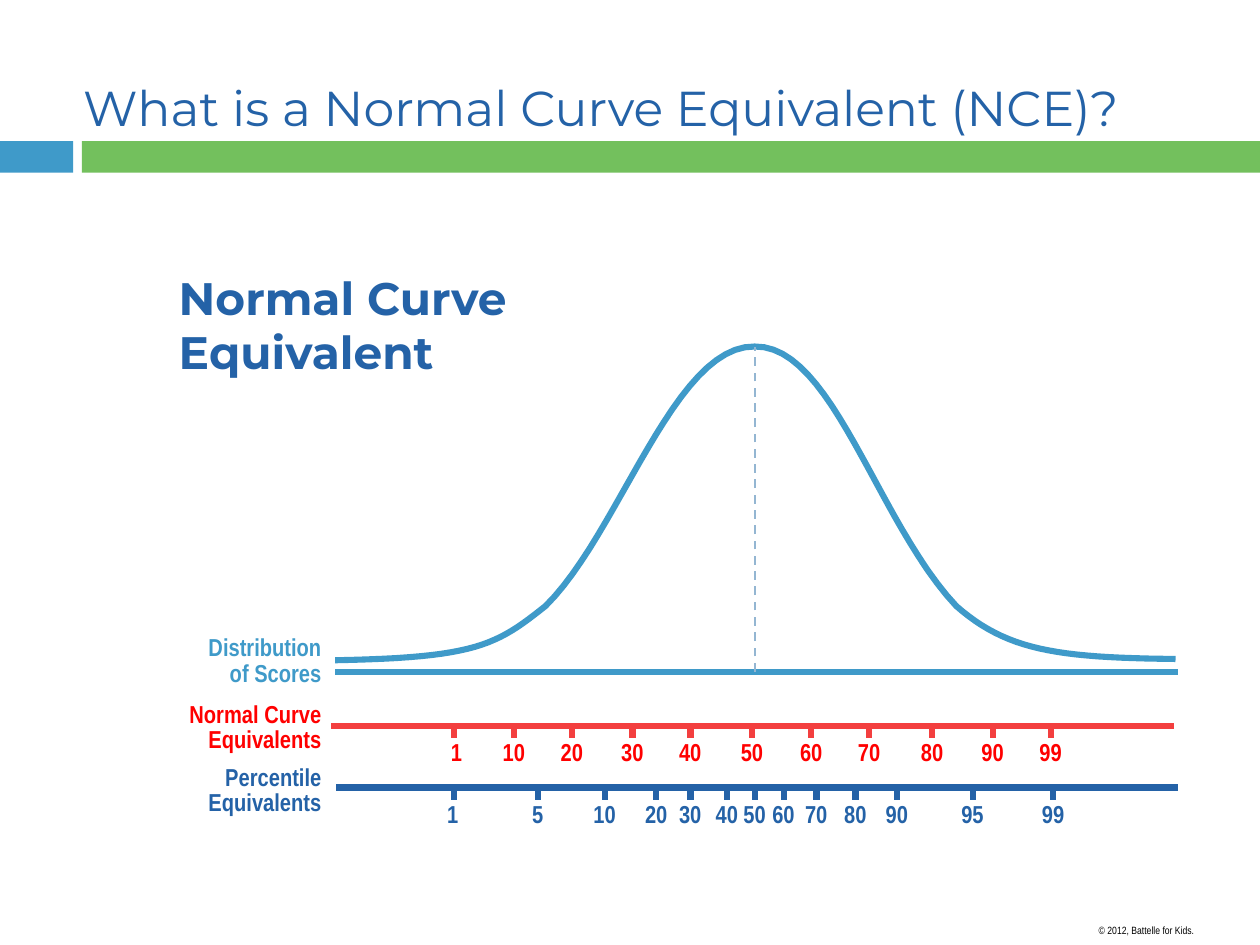
from lxml import etree
from pptx import Presentation
from pptx.dml.color import RGBColor
from pptx.enum import dml, shapes, text
from pptx.oxml import ns
from pptx.util import Inches, Pt

HUES = {"sky": "3F9AC9", "green": "73C05D", "navy": "2462A7", "red": "FF0000",
        "coral": "F33F3F", "dash": "94B6D2", "white": "FFFFFF", "black": "000000"}
NARROW, WIDE = "Arial Narrow", "Montserrat"
RIGHT = text.PP_ALIGN.RIGHT
MID = 5.99

CURVE = [(2.66, 5.24), (3.78, 5.22), (3.94, 5.12), (4.33, 4.81),
         (4.92, 4.23), (5.35, 2.74), (MID, 2.75),
         (6.61, 2.74), (6.96, 4.14), (7.59, 4.81),
         (7.99, 5.16), (8.38, 5.22), (9.33, 5.23)]
NCE = {1: 3.6, 10: 4.08, 20: 4.54, 30: 5.02, 40: 5.48, 50: 5.97,
       60: 6.44, 70: 6.9, 80: 7.4, 90: 7.88, 99: 8.34}
RANKS = {1: 3.6, 5: 4.27, 10: 4.8, 20: 5.21, 30: 5.48, 40: 5.77, 50: MID,
         60: 6.22, 70: 6.48, 80: 6.79, 90: 7.12, 95: 7.72, 99: 8.36}


def rgb(hue):
    return RGBColor.from_string(HUES[hue])


def style(par, size, face, hue, bold=False):
    font = par.font
    font.size, font.name, font.bold = Pt(size), face, bold
    font.color.rgb = rgb(hue)


def bar(slide, left, width, hue):
    box = slide.shapes.add_shape(shapes.MSO_SHAPE.RECTANGLE, Inches(left),
                                 Inches(1.12), Inches(width), Inches(0.25))
    box.shadow.inherit = False
    box.fill.solid()
    box.fill.fore_color.rgb = rgb(hue)
    box.line.fill.background()


def label(slide, at, lines, size, face, hue, bold=True, align=None, wrap=True):
    box = slide.shapes.add_textbox(*map(Inches, at))
    frame = box.text_frame
    frame.word_wrap = wrap
    frame.text = "\n".join(lines)
    for par in frame.paragraphs:
        par.alignment = align
        style(par, size, face, hue, bold)
    return box


def rule(slide, start, end, hue, width=3.5):
    line = slide.shapes.add_connector(shapes.MSO_CONNECTOR.STRAIGHT,
                                      *map(Inches, start + end))
    line.line.color.rgb = rgb(hue)
    line.line.width = Pt(width)
    etree.SubElement(line._element.spPr, ns.qn("a:effectLst"))
    return line


def bend(knots, steps=24):
    """Return points along a chain of cubic Bezier curves."""
    points = [knots[0]]
    for i in range(0, len(knots) - 1, 3):
        for n in range(1, steps + 1):
            t = n / steps
            parts = ((1 - t) ** 3, 3 * t * (1 - t) ** 2, 3 * t * t * (1 - t), t ** 3)
            points.append(tuple(sum(w * k[axis] for w, k in zip(parts, knots[i:i + 4]))
                                for axis in (0, 1)))
    return points


def bell(slide):
    first, *rest = [(Inches(x), Inches(y)) for x, y in bend(CURVE)]
    form = slide.shapes.build_freeform(*first)
    form.add_line_segments(rest, close=False)
    curve = form.convert_to_shape()
    curve.shadow.inherit = False
    curve.fill.background()
    curve.line.color.rgb = rgb("sky")
    curve.line.width = Pt(3.5)


def scale(slide, marks, left, top, hue, ink, start, end, y):
    """Draw an axis with ticks and a row of numbers tabbed to the ticks."""
    box = slide.shapes.add_textbox(Inches(left), Inches(top), Inches(5.29), Inches(0.34))
    box.text_frame.word_wrap = True
    par = box.text_frame.paragraphs[0]
    par.text = "\t".join(map(str, marks))
    tabs = etree.SubElement(par._p.get_or_add_pPr(), ns.qn("a:tabLst"))
    for x in list(marks.values())[1:]:
        etree.SubElement(tabs, ns.qn("a:tab"), pos=str(Inches(x - left - 0.1)), algn="ctr")
    style(par, 14, NARROW, ink, True)
    rule(slide, (start, y), (end, y), hue)
    for x in marks.values():
        rule(slide, (x, y + 0.02), (x, y + 0.1), hue)


def head(slide):
    bar(slide, 0, 0.58, "sky")
    bar(slide, 0.65, 9.35, "green")
    title = slide.shapes.title
    title.left, title.top, title.width, title.height = map(Inches, (0.56, 0.39, 9.42, 0.92))
    frame = title.text_frame
    frame.text = "What is a Normal Curve Equivalent (NCE)?"
    frame.vertical_anchor = text.MSO_ANCHOR.MIDDLE
    frame.auto_size = text.MSO_AUTO_SIZE.NONE
    frame.paragraphs[0].alignment = text.PP_ALIGN.LEFT
    style(frame.paragraphs[0], 28, WIDE, "navy")


def main():
    deck = Presentation()
    deck.slide_width, deck.slide_height = Inches(10), Inches(7.5)
    slide = deck.slides.add_slide(deck.slide_layouts[5])
    head(slide)
    note = label(slide, (8.72, 7.33, 1.25, 0.08), ["© 2012, Battelle for Kids."],
                 6, NARROW, "black", bold=False)
    frame = note.text_frame
    frame.margin_left = frame.margin_right = frame.margin_top = frame.margin_bottom = 0

    bell(slide)
    rule(slide, (2.66, 5.33), (9.35, 5.33), "sky")
    scale(slide, NCE, 3.48, 5.8, "coral", "red", 2.63, 9.32, 5.76)
    scale(slide, RANKS, 3.45, 6.29, "navy", "navy", 2.67, 9.35, 6.25)

    label(slide, (1.32, 2.09, 2.95, 0.98), ["Normal Curve", "Equivalent"],
          26, WIDE, "navy", wrap=False)
    names = [(4.97, "sky", ("Distribution", "of Scores")),
             (5.5, "red", ("Normal Curve", "Equivalents")),
             (6, "navy", ("Percentile", "Equivalents"))]
    for top, hue, lines in names:
        for i, line in enumerate(lines):
            label(slide, (1.1, top + 0.2 * i, 1.55, 0.34), [line], 14, NARROW, hue, align=RIGHT)

    mean = rule(slide, (MID, 5.33), (MID, 2.75), "dash", 1.25)
    mean.line.dash_style = dml.MSO_LINE.DASH
    deck.save("out.pptx")


if __name__ == "__main__":
    main()
